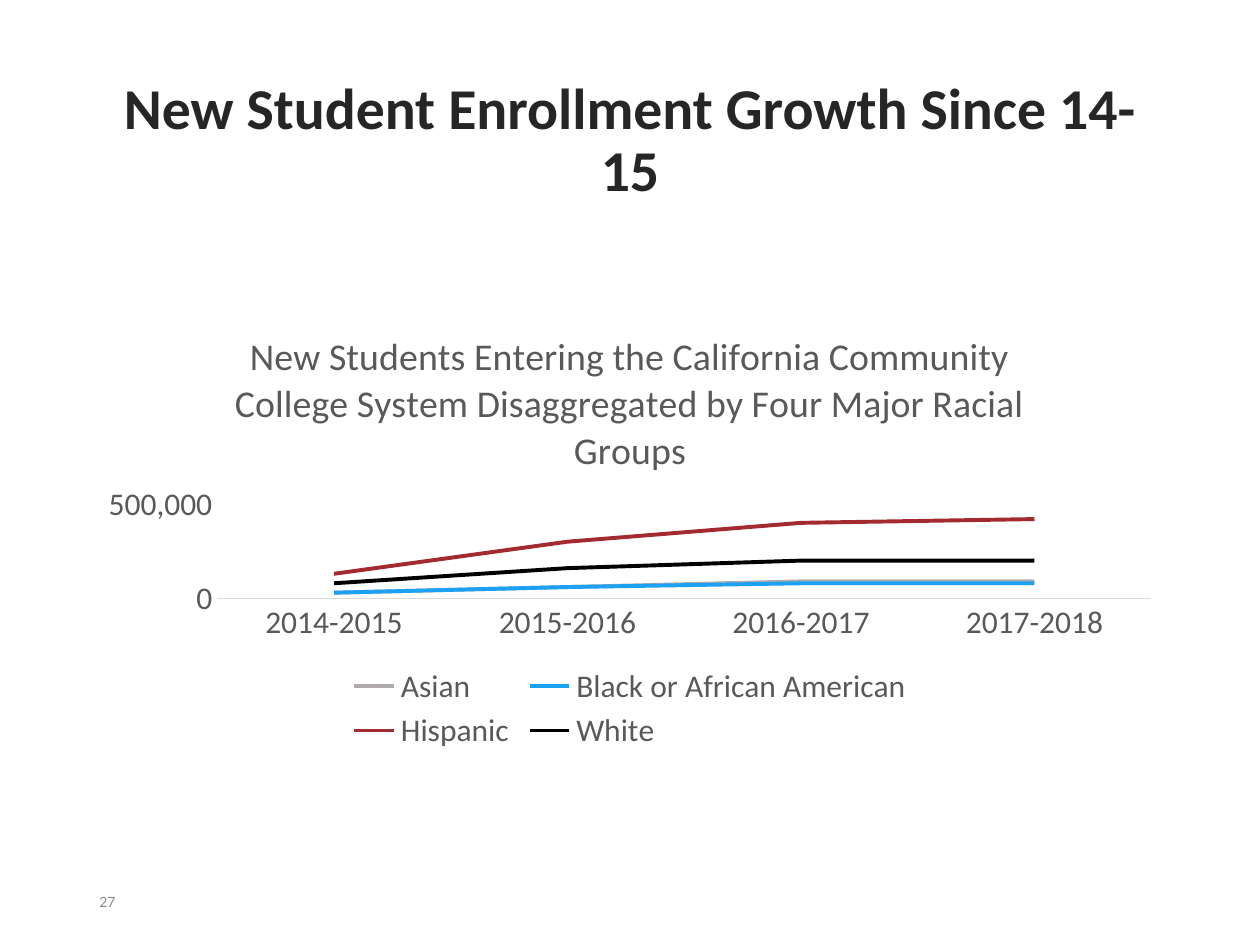
from lxml import etree
from pptx import Presentation, util as u
from pptx.chart.data import CategoryChartData
from pptx.dml.color import RGBColor
from pptx.enum import chart as ch, text as t
from pptx.oxml.ns import qn

COLORS = {
    "title": "262626", "label": "595959", "number": "8C8C8C", "axis": "D9D9D9",
    "Asian": "AFABAB", "Black or African American": "1DA1F2",
    "Hispanic": "A32B30", "White": "000000",
}
NEW_STUDENTS = {
    "Asian": (30000, 60000, 90000, 90000),
    "Black or African American": (30000, 60000, 80000, 80000),
    "Hispanic": (130000, 300000, 400000, 420000),
    "White": (80000, 160000, 200000, 200000),
}
LEFT, WIDTH = u.Inches(0.69), u.Inches(8.62)


def style_font(font, size, color, bold=False):
    font.name, font.size, font.bold = "Calibri", u.Pt(size), bold
    font.color.rgb = RGBColor.from_string(COLORS[color])


def add_text(content, top, width, height, size, color, bold=False,
             align=t.PP_ALIGN.LEFT, spacing=1.0):
    frame = slide.shapes.add_textbox(LEFT, top, width, height).text_frame
    frame.word_wrap = True
    frame.vertical_anchor = t.MSO_ANCHOR.MIDDLE
    paragraph = frame.paragraphs[0]
    paragraph.alignment, paragraph.line_spacing = align, spacing
    run = paragraph.add_run()
    run.text = content
    style_font(run.font, size, color, bold)


prs = Presentation()
prs.slide_width, prs.slide_height = u.Inches(10), u.Inches(7.5)
slide = prs.slides.add_slide(prs.slide_layouts[6])

add_text("New Student Enrollment Growth Since 14-15", u.Inches(0.4), WIDTH, u.Inches(1.45),
         size=33, color="title", bold=True, align=t.PP_ALIGN.CENTER, spacing=0.9)
add_text("27", u.Inches(6.95), u.Inches(2.25), u.Inches(0.4), size=9, color="number")

enrollment = CategoryChartData(number_format="#,##0")
enrollment.categories = ["2014-2015", "2015-2016", "2016-2017", "2017-2018"]
for group, counts in NEW_STUDENTS.items():
    enrollment.add_series(group, counts)
chart = slide.shapes.add_chart(ch.XL_CHART_TYPE.LINE, LEFT, u.Inches(2.43),
                               WIDTH, u.Inches(3.57), enrollment).chart
style_font(chart.font, 18, "label")

chart.has_title = True
heading = chart.chart_title.text_frame.paragraphs[0].add_run()
heading.text = ("New Students Entering the California Community College System "
                "Disaggregated by Four Major Racial Groups")
style_font(heading.font, 21.6, "label")
chart.chart_title.include_in_layout = False

chart.has_legend = True
chart.legend.position = ch.XL_LEGEND_POSITION.BOTTOM
chart.legend.include_in_layout = False
style_font(chart.legend.font, 18, "label")

years, students = chart.category_axis, chart.value_axis
for axis in (years, students):
    axis.major_tick_mark = axis.minor_tick_mark = ch.XL_TICK_MARK.NONE
    axis.has_major_gridlines = False
    style_font(axis.tick_labels.font, 18, "label")
years.format.line.color.rgb = RGBColor.from_string(COLORS["axis"])
years.format.line.width = u.Pt(0.75)
students.format.line.fill.background()
students.minimum_scale, students.maximum_scale, students.major_unit = 0, 500000, 500000
students.tick_labels.number_format = "#,##0"
students.tick_labels.number_format_is_linked = False

for series in chart.plots[0].series:
    series.smooth = False
    series.marker.style = ch.XL_MARKER_STYLE.NONE
    series.format.line.color.rgb = RGBColor.from_string(COLORS[series.name])
    series.format.line.width = u.Pt(2.25)

# Fix the inner plot area, in fractions of the chart
plot_area = chart.plots[0]._element.getparent()
for old_layout in plot_area.findall(qn("c:layout")):
    plot_area.remove(old_layout)
layout = etree.Element(qn("c:layout"))
plot_area.insert(0, layout)
manual = etree.SubElement(layout, qn("c:manualLayout"))
for tag, value in (("layoutTarget", "inner"), ("xMode", "edge"), ("yMode", "edge"),
                   ("x", "0.12"), ("y", "0.44"), ("w", "0.86"), ("h", "0.21")):
    etree.SubElement(manual, qn("c:" + tag)).set("val", value)

prs.save("out.pptx")
